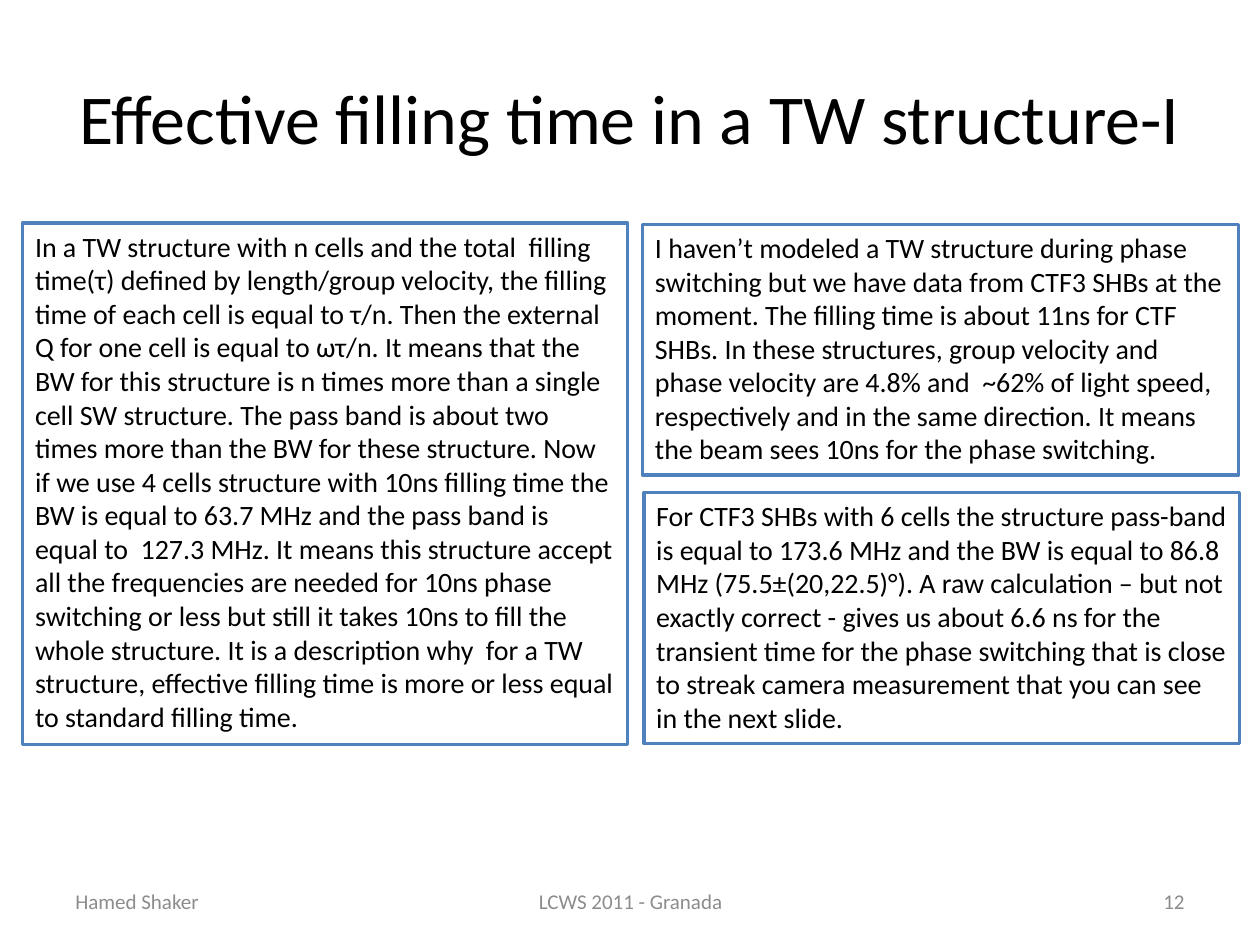
from dataclasses import dataclass

from pptx import Presentation
from pptx import util as u
from pptx.dml.color import RGBColor
from pptx.enum import shapes, text

PX = u.Inches(1) // 100
FONT = "Calibri"
BLACK = RGBColor(0x00, 0x00, 0x00)
WHITE = RGBColor(0xFF, 0xFF, 0xFF)
GREY = RGBColor(0x8C, 0x8C, 0x8C)
BLUE = RGBColor(0x4F, 0x81, 0xBD)


@dataclass(frozen=True)
class Box:
    left: int
    top: int
    width: int
    height: int

    def emu(self) -> tuple[int, ...]:
        return tuple(length * PX for length in (self.left, self.top, self.width, self.height))


@dataclass(frozen=True)
class Panel:
    box: Box
    words: str


@dataclass(frozen=True)
class FooterItem:
    left: int
    width: int
    words: str
    align: text.PP_ALIGN


TITLE = "Effective filling time in a TW structure-I"
TITLE_BOX = Box(50, 30, 900, 125)
FOOTER_TOP, FOOTER_HEIGHT = 695, 40

FOOTER = (
    FooterItem(50, 233, "Hamed Shaker", text.PP_ALIGN.LEFT),
    FooterItem(342, 317, "LCWS 2011 - Granada", text.PP_ALIGN.CENTER),
    FooterItem(717, 233, "12", text.PP_ALIGN.RIGHT),
)

PANELS = (
    Panel(
        Box(18, 177, 480, 414),
        "In a TW structure with n cells and the total  filling time(τ) defined by "
        "length/group velocity, the filling time of each cell is equal to τ/n. Then the "
        "external Q for one cell is equal to ωτ/n. It means that the BW for this structure "
        "is n times more than a single cell SW structure. The pass band is about two times "
        "more than the BW for these structure. Now if we use 4 cells structure with 10ns "
        "filling time the BW is equal to 63.7 MHz and the pass band is equal to  127.3 MHz. "
        "It means this structure accept all the frequencies are needed for 10ns phase "
        "switching or less but still it takes 10ns to fill the whole structure. It is a "
        "description why  for a TW structure, effective filling time is more or less equal "
        "to standard filling time.",
    ),
    Panel(
        Box(510, 178, 473, 199),
        "I haven’t modeled a TW structure during phase switching but we have data from "
        "CTF3 SHBs at the moment. The filling time is about 11ns for CTF SHBs. In these "
        "structures, group velocity and phase velocity are 4.8% and  ~62% of light speed, "
        "respectively and in the same direction. It means the beam sees 10ns for the phase "
        "switching.",
    ),
    Panel(
        Box(511, 391, 473, 199),
        "For CTF3 SHBs with 6 cells the structure pass-band is equal to 173.6 MHz and the "
        "BW is equal to 86.8 MHz (75.5±(20,22.5)°). A raw calculation – but not exactly "
        "correct - gives us about 6.6 ns for the transient time for the phase switching "
        "that is close to streak camera measurement that you can see in the next slide.",
    ),
)


def write_text(shape, words: str, *, size: int, color: RGBColor = BLACK,
               align=text.PP_ALIGN.LEFT, anchor=text.MSO_ANCHOR.MIDDLE) -> None:
    frame = shape.text_frame
    frame.word_wrap = True
    frame.vertical_anchor = anchor
    paragraph = frame.paragraphs[0]
    paragraph.alignment = align
    run = paragraph.add_run()
    run.text = words
    run.font.name = FONT
    run.font.size = u.Pt(size)
    run.font.color.rgb = color


def draw_panel(slide, panel: Panel) -> None:
    shape = slide.shapes.add_shape(shapes.MSO_SHAPE.RECTANGLE, *panel.box.emu())
    shape.shadow.inherit = False
    shape.fill.solid()
    shape.fill.fore_color.rgb = WHITE
    shape.line.color.rgb = BLUE
    shape.line.width = u.Pt(2)
    write_text(shape, panel.words, size=16, anchor=text.MSO_ANCHOR.TOP)
    shape.text_frame.auto_size = text.MSO_AUTO_SIZE.SHAPE_TO_FIT_TEXT


def draw_footer_item(slide, item: FooterItem) -> None:
    box = Box(item.left, FOOTER_TOP, item.width, FOOTER_HEIGHT)
    shape = slide.shapes.add_textbox(*box.emu())
    write_text(shape, item.words, size=12, color=GREY, align=item.align)


def main() -> None:
    presentation = Presentation()
    presentation.slide_width = 1000 * PX
    presentation.slide_height = 750 * PX
    slide = presentation.slides.add_slide(presentation.slide_layouts[6])

    title = slide.shapes.add_textbox(*TITLE_BOX.emu())
    write_text(title, TITLE, size=40, align=text.PP_ALIGN.CENTER)
    for item in FOOTER:
        draw_footer_item(slide, item)
    for panel in PANELS:
        draw_panel(slide, panel)

    presentation.save("out.pptx")


if __name__ == "__main__":
    main()
